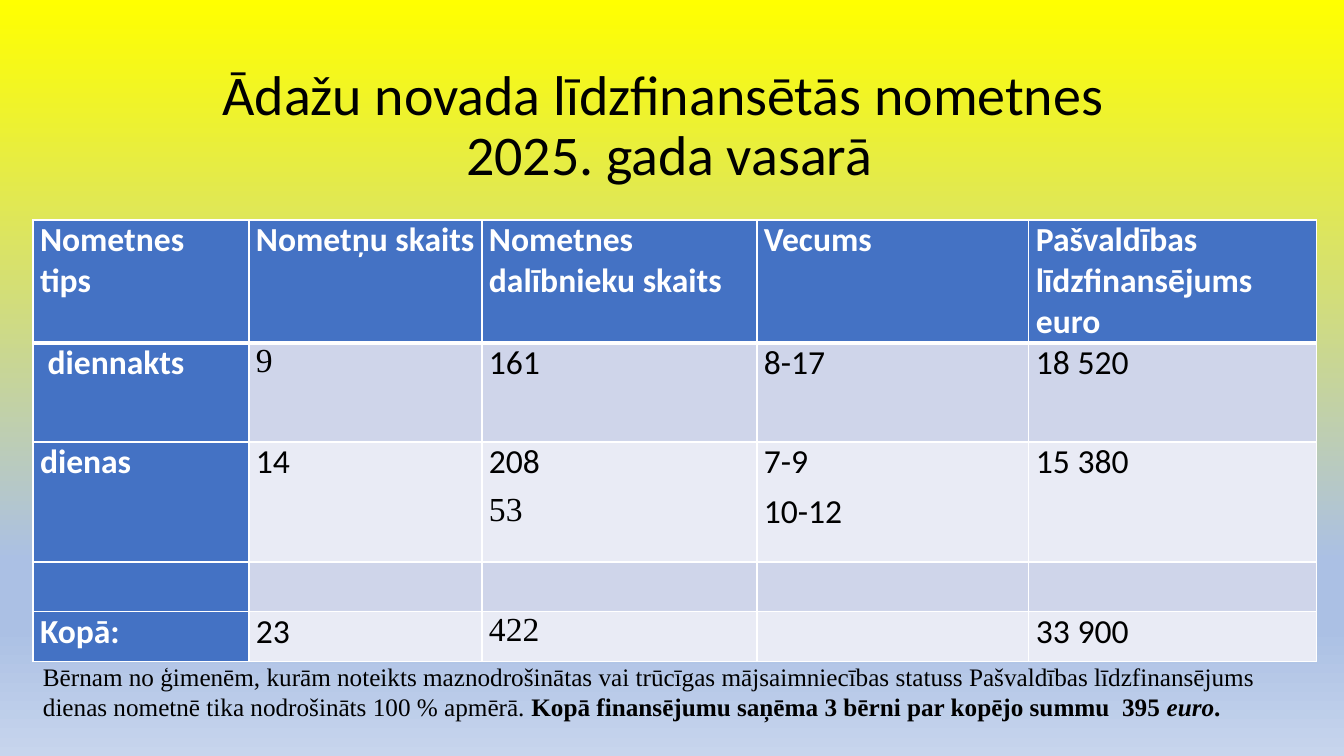
from copy import deepcopy

from lxml.etree import SubElement
from pptx import Presentation
from pptx.dml.color import RGBColor
from pptx.enum.text import MSO_ANCHOR as ANCHOR, PP_ALIGN as ALIGN
from pptx.oxml.ns import qn
from pptx.util import Pt

EMU_PER_PX = 914400 / 100.8
SANS, SERIF = "Calibri", "Times New Roman"
BLACK, WHITE, BLUE = "000000", "FFFFFF", "4472C4"
BANDS = ("CFD5EA", "E9EBF5")


def px(n):
    return round(n * EMU_PER_PX)


def rgb(color):
    return RGBColor.from_string(color)


def set_font(font, name, size, color=BLACK, bold=False):
    font.name, font.size, font.bold = name, Pt(size), bold
    font.color.rgb = rgb(color)


class Deck:
    def __init__(self, width, height):
        self.prs = Presentation()
        self.prs.slide_width, self.prs.slide_height = px(width), px(height)
        self.s = self.prs.slides.add_slide(self.prs.slide_layouts[6])

    def background(self, stops):
        fill = self.s.background.fill
        fill.gradient()
        fill.gradient_angle = 270
        gs_list = self.s._element.find(".//" + qn("a:gsLst"))
        for _ in range(len(stops) - len(gs_list)):
            gs_list.append(deepcopy(gs_list[0]))
        for stop, (position, color) in zip(fill.gradient_stops, stops):
            stop.position = position
            stop.color.rgb = rgb(color)

    def text(self, box, anchor=ANCHOR.TOP):
        tf = self.s.shapes.add_textbox(*map(px, box)).text_frame
        tf.word_wrap = True
        tf.vertical_anchor = anchor
        return tf.paragraphs[0]

    def title(self, box, text):
        p = self.text(box, ANCHOR.BOTTOM)
        p.text = text
        p.alignment, p.line_spacing = ALIGN.CENTER, 0.9
        set_font(p.font, SANS, 40)

    def note(self, box, runs):
        p = self.text(box)
        set_font(p.font, SERIF, 18)
        for text, bold, italic in runs:
            r = p.add_run()
            r.text = text
            set_font(r.font, SERIF, 18, bold=bold)
            r.font.italic = italic

    def table(self, left, top, widths, heights, rows):
        box = map(px, (left, top, sum(widths), sum(heights)))
        table = self.s.shapes.add_table(len(heights), len(widths), *box).table
        table.horz_banding = False
        for column, width in zip(table.columns, widths):
            column.width = px(width)
        for row, height in zip(table.rows, heights):
            row.height = px(height)
        for i, row in enumerate(rows):
            for j, lines in enumerate(row):
                self.cell(table.cell(i, j), i, j, lines)

    def cell(self, cell, i, j, lines):
        heading = i == 0 or j == 0
        cell.margin_left = cell.margin_right = px(7)
        cell.margin_top = cell.margin_bottom = 0
        # Borders come before the fill in the cell properties
        for side in ("lnL", "lnR", "lnT", "lnB"):
            thick = (i, side) in ((0, "lnB"), (1, "lnT"))
            ln = SubElement(cell._tc.get_or_add_tcPr(), qn("a:" + side),
                            w=str(Pt(3 if thick else 1)))
            solid = SubElement(ln, qn("a:solidFill"))
            SubElement(solid, qn("a:srgbClr"), val=WHITE)
        cell.fill.solid()
        cell.fill.fore_color.rgb = rgb(BLUE if heading else BANDS[(i - 1) % 2])
        cell.text = lines
        for p in cell.text_frame.paragraphs:
            p.alignment, p.space_after = ALIGN.JUSTIFY, Pt(6)
            name = SERIF if p.text in SERIF_VALUES else SANS
            set_font(p.font, name, 24, WHITE if heading else BLACK, heading)


SERIF_VALUES = ("9", "53", "422")
CAMPS = [
    ("Nometnes tips", "Nometņu skaits", "Nometnes dalībnieku skaits",
     "Vecums ", "Pašvaldības līdzfinansējums  euro"),
    (" diennakts", "9", "161", "8-17", "18 520 "),
    ("dienas", "14", "208\n53", "7-9\n10-12", "15 380 "),
    ("", "", "", "", ""),
    ("Kopā:", "23", "422", "", "33 900"),
]


def main():
    deck = Deck(1344, 756)
    deck.background([(0, "FFFF00"), (0.74, "ABC0E4"),
                     (0.83, "ABC0E4"), (1, "C7D5ED")])

    # Title
    deck.title((49, 0, 1253, 193),
               "Ādažu novada līdzfinansētās nometnes  \v2025. gada vasarā ")

    # Camps by type
    deck.table(33, 220, (216, 233, 275, 272, 288), (123, 99, 120, 50, 50),
               CAMPS)

    # Note below the table
    deck.note((33, 656, 1284, 72), [
        ("Bērnam no ģimenēm, kurām noteikts maznodrošinātas vai trūcīgas "
         "mājsaimniecības statuss Pašvaldības līdzfinansējums dienas nometnē "
         "tika nodrošināts 100 % apmērā. ", False, False),
        ("Kopā finansējumu saņēma 3 bērni par kopējo summu  395 ",
         True, False),
        ("euro", True, True),
        (".", True, False),
    ])
    deck.prs.save("out.pptx")


if __name__ == "__main__":
    main()
